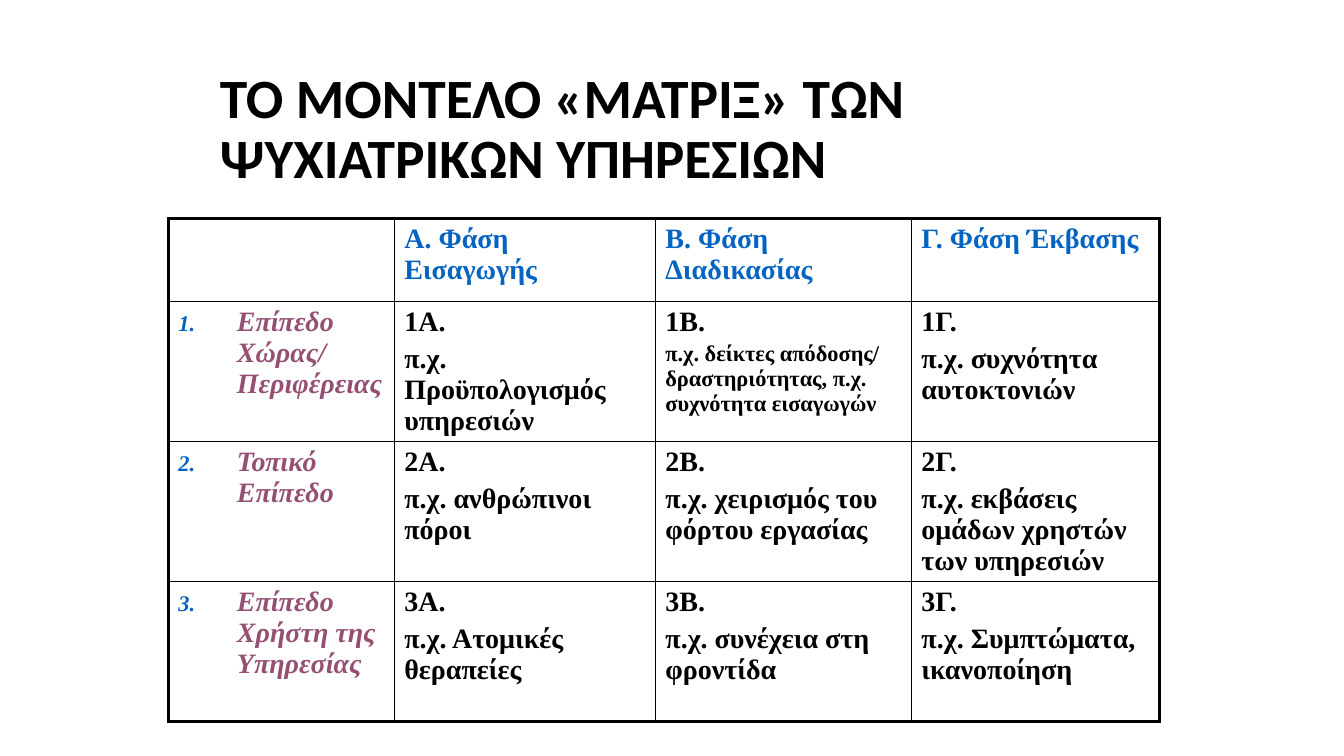
from dataclasses import dataclass

import lxml.etree
import pptx
import pptx.dml.color
import pptx.enum.text
import pptx.oxml.ns
import pptx.util

Inches = pptx.util.Inches
Pt = pptx.util.Pt


@dataclass(frozen=True)
class Theme:
    title_font: str = "Calibri"
    table_font: str = "Times New Roman"
    black: str = "000000"
    blue: str = "0563C1"
    plum: str = "954F72"
    title_size: float = 39.6
    text_size: float = 20
    small_size: float = 16
    outer_line: float = 2.25
    inner_line: float = 1


THEME = Theme()


@dataclass(frozen=True)
class Entry:
    text: str
    size: float = THEME.text_size


@dataclass(frozen=True)
class Level:
    name: str
    examples: tuple[Entry, ...]


PHASES = ("A. Φάση Εισαγωγής", "B. Φάση Διαδικασίας", "Γ. Φάση Έκβασης")
PHASE_LETTERS = "ABΓ"
LEVELS = (
    Level("Επίπεδο Χώρας/ Περιφέρειας", (
        Entry("π.χ. Προϋπολογισμός υπηρεσιών"),
        Entry("π.χ. δείκτες απόδοσης/ δραστηριότητας, π.χ. συχνότητα εισαγωγών",
              THEME.small_size),
        Entry("π.χ. συχνότητα αυτοκτονιών"))),
    Level("Τοπικό Επίπεδο", (
        Entry("π.χ. ανθρώπινοι πόροι"),
        Entry("π.χ. χειρισμός του φόρτου εργασίας"),
        Entry("π.χ. εκβάσεις ομάδων χρηστών των υπηρεσιών"))),
    Level("Επίπεδο Χρήστη της Υπηρεσίας", (
        Entry("π.χ. Ατομικές θεραπείες"),
        Entry("π.χ. συνέχεια στη φροντίδα"),
        Entry("π.χ. Συμπτώματα, ικανοποίηση"))),
)
COLUMN_WIDTHS = (2.24, 2.59, 2.54, 2.46)
HEADER_HEIGHT = 0.82
LEVEL_HEIGHT = 1.39


def add_element(parent, tag: str, **attributes: str):
    return lxml.etree.SubElement(parent, pptx.oxml.ns.qn(tag), attributes)


def style_font(font, name: str, size: float, color: str, italic: bool = False) -> None:
    font.name = name
    font.size = Pt(size)
    font.bold = True
    font.italic = italic
    font.color.rgb = pptx.dml.color.RGBColor.from_string(color)


def add_number(para, number: int) -> None:
    properties = para._p.get_or_add_pPr()
    indent = Inches(0.58)
    properties.set("marL", str(indent))
    properties.set("indent", str(-indent))
    bullet_color = add_element(properties, "a:buClr")
    add_element(bullet_color, "a:srgbClr", val=THEME.blue)
    add_element(properties, "a:buSzPct", val="80000")
    add_element(properties, "a:buFont", typeface="+mj-lt")
    add_element(properties, "a:buAutoNum", type="arabicPeriod", startAt=str(number))


def write_entries(cell, *entries: Entry, color: str = THEME.black,
                  number: int | None = None) -> None:
    for index, entry in enumerate(entries):
        para = cell.text_frame.add_paragraph() if index else cell.text_frame.paragraphs[0]
        para.text = entry.text
        if index:
            para.space_before = Pt(entry.size * 0.2)
        if number is not None:
            add_number(para, number)
        style_font(para.font, THEME.table_font, entry.size, color, number is not None)


def draw_borders(cell, row: int, column: int) -> None:
    outer_sides = {
        "a:lnL": column == 0,
        "a:lnR": column == len(PHASES),
        "a:lnT": row == 0,
        "a:lnB": row == len(LEVELS),
    }
    properties = cell._tc.get_or_add_tcPr()
    for tag, is_outer in outer_sides.items():
        width = THEME.outer_line if is_outer else THEME.inner_line
        line = add_element(properties, tag, w=str(Pt(width)))
        fill = add_element(line, "a:solidFill")
        add_element(fill, "a:srgbClr", val=THEME.black)
    cell.fill.background()


def add_title(page) -> None:
    title = page.shapes.title
    title.left, title.top = Inches(2.08), Inches(0.67)
    title.width, title.height = Inches(9.25), Inches(1.25)
    frame = title.text_frame
    frame.text = "ΤΟ ΜΟΝΤΕΛΟ «ΜΑΤΡΙΞ» ΤΩΝ ΨΥΧΙΑΤΡΙΚΩΝ ΥΠΗΡΕΣΙΩΝ"
    frame.word_wrap = True
    frame.auto_size = pptx.enum.text.MSO_AUTO_SIZE.NONE
    frame.vertical_anchor = pptx.enum.text.MSO_ANCHOR.MIDDLE
    para = frame.paragraphs[0]
    para.alignment = pptx.enum.text.PP_ALIGN.LEFT
    para.line_spacing = 0.9
    style_font(para.font, THEME.title_font, THEME.title_size, THEME.black)


def add_matrix(page) -> None:
    heights = (HEADER_HEIGHT,) + (LEVEL_HEIGHT,) * len(LEVELS)
    table = page.shapes.add_table(
        len(heights), len(COLUMN_WIDTHS), Inches(1.67), Inches(2.17),
        Inches(sum(COLUMN_WIDTHS)), Inches(sum(heights))).table
    table.first_row = False
    table.horz_banding = False
    for column, width in zip(table.columns, COLUMN_WIDTHS):
        column.width = Inches(width)
    for row, height in zip(table.rows, heights):
        row.height = Inches(height)

    for column, phase in enumerate(PHASES, 1):
        write_entries(table.cell(0, column), Entry(phase), color=THEME.blue)
    for row, level in enumerate(LEVELS, 1):
        write_entries(table.cell(row, 0), Entry(level.name), color=THEME.plum, number=row)
        for column, (letter, example) in enumerate(zip(PHASE_LETTERS, level.examples), 1):
            write_entries(table.cell(row, column), Entry(f"{row}{letter}."), example)
    for row in range(len(heights)):
        for column in range(len(COLUMN_WIDTHS)):
            draw_borders(table.cell(row, column), row, column)


def main() -> None:
    deck = pptx.Presentation()
    deck.slide_width, deck.slide_height = Inches(13.33), Inches(7.5)
    page = deck.slides.add_slide(deck.slide_layouts.get_by_name("Title Only"))
    add_title(page)
    add_matrix(page)
    deck.save("out.pptx")


if __name__ == "__main__":
    main()
